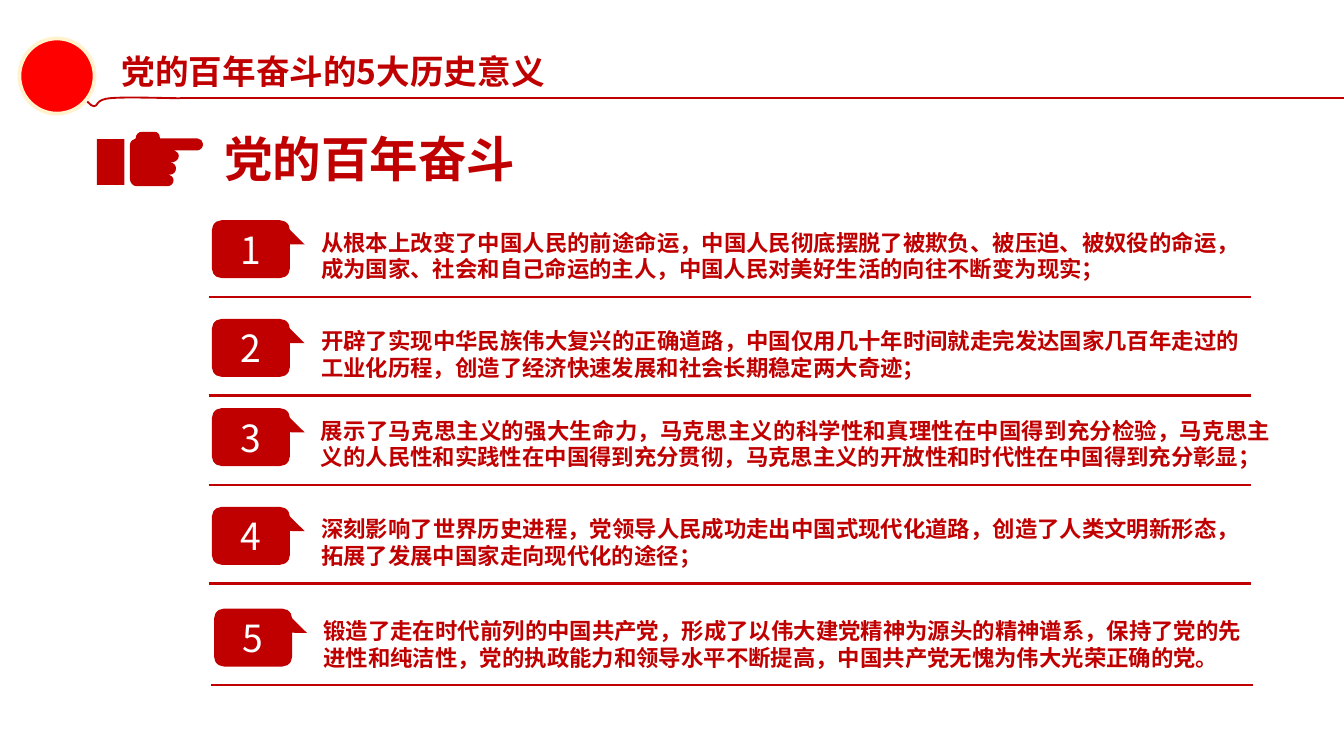
"""Build a slide on five meanings of a hundred years of struggle."""
from dataclasses import dataclass

from lxml import etree
from pptx import Presentation
from pptx.dml.color import RGBColor
from pptx.enum.shapes import MSO_CONNECTOR, MSO_SHAPE
from pptx.enum.text import MSO_ANCHOR, MSO_AUTO_SIZE, PP_ALIGN
from pptx.oxml.ns import qn
from pptx.util import Pt

STRAIGHT = MSO_CONNECTOR.STRAIGHT
BOX, OVAL = MSO_SHAPE.RECTANGLE, MSO_SHAPE.OVAL
CALLOUT = MSO_SHAPE.ROUNDED_RECTANGULAR_CALLOUT
TOP, MIDDLE = MSO_ANCHOR.TOP, MSO_ANCHOR.MIDDLE
LEFT, CENTER, JUSTIFY = PP_ALIGN.LEFT, PP_ALIGN.CENTER, PP_ALIGN.JUSTIFY
NO_FIT = MSO_AUTO_SIZE.NONE


@dataclass(frozen=True)
class Theme:
    """Colours, font and type sizes."""
    red: RGBColor = RGBColor(0xC0, 0x00, 0x00)
    bright: RGBColor = RGBColor(0xFF, 0x00, 0x00)
    cream: RGBColor = RGBColor(0xFF, 0xF2, 0xCC)
    white: RGBColor = RGBColor(0xFF, 0xFF, 0xFF)
    font: str = "Noto Sans CJK SC"
    title: int = 18
    head: int = 26
    number: int = 20
    body: int = 12
    leading: float = 1.2


@dataclass(frozen=True)
class Row:
    """One numbered point."""
    top: float
    text: str
    shift: float = 0
    width: float = 506.4


THEME = Theme()

ROWS = [
    Row(118, "从根本上改变了中国人民的前途命运，中国人民彻底摆脱了被欺负、被压迫、被奴役的命运，"
             "成为国家、社会和自己命运的主人，中国人民对美好生活的向往不断变为现实；"),
    Row(170.9, "开辟了实现中华民族伟大复兴的正确道路，中国仅用几十年时间就走完发达国家几百年走过的"
               "工业化历程，创造了经济快速发展和社会长期稳定两大奇迹；"),
    Row(218.7, "展示了马克思主义的强大生命力，马克思主义的科学性和真理性在中国得到充分检验，马克思主"
               "义的人民性和实践性在中国得到充分贯彻，马克思主义的开放性和时代性在中国得到充分彰显；",
        width=523.5),
    Row(271.6, "深刻影响了世界历史进程，党领导人民成功走出中国式现代化道路，创造了人类文明新形态，"
               "拓展了发展中国家走向现代化的途径；"),
    Row(326.1, "锻造了走在时代前列的中国共产党，形成了以伟大建党精神为源头的精神谱系，保持了党的先"
               "进性和纯洁性，党的执政能力和领导水平不断提高，中国共产党无愧为伟大光荣正确的党。",
        shift=1.2),
]

WAVE = [
    (25.9, 55.4),
    (28.8, 54.7, 31.7, 51.1, 34.6, 51.5), (38.2, 51.8, 35.3, 55.4, 38.2, 56.2),
    (41, 56.9, 42.5, 53.3, 44.6, 53.3), (46.8, 53.3, 48.2, 56.9, 50.4, 56.9),
    (52.6, 56.9, 51.1, 53.3, 59, 52.6), (67, 51.8, 88.6, 52.6, 96.5, 52.6),
]

HAND = [
    (93, 96.5),
    (93, 95, 91.5, 93.6, 89.5, 93.6), (91, 93.6),
    (93, 93.6, 94.3, 92, 94.3, 90.3), (94.3, 88.5, 93, 87.1, 91, 87.1),
    (93.5, 87.1, 95.8, 86, 95.8, 83.5), (95.8, 82, 94.3, 80.6, 92.2, 80.6),
    (105.8, 80.6),
    (107.3, 80.6, 108.8, 79, 108.8, 77.2), (108.8, 75.6, 107.3, 74.2, 105.8, 74.2),
    (85.7, 74.2),
    (85.7, 72, 84.5, 70.6, 82.8, 70.6), (76.3, 70.6),
    (74.2, 70.6, 72.7, 72, 72.7, 74.2), (71, 74.5, 69.6, 76, 69.6, 77.8),
    (69.6, 95.8),
    (69.6, 98, 71.3, 99.8, 73.4, 99.8), (89.5, 99.8),
    (91.5, 99.8, 93, 98.5, 93, 96.5),
]


def apply(target, values: dict) -> None:
    """Set each named value on the target."""
    for name, value in values.items():
        setattr(target, name, value)


def write(frame, text: str, size: int, align, color=THEME.red, bold: bool = True,
          side: float = 7.2, edge: float = 3.6, anchor=TOP) -> None:
    """Fill a text frame with one formatted paragraph."""
    apply(frame, {
        "word_wrap": True, "auto_size": NO_FIT, "vertical_anchor": anchor,
        "margin_left": Pt(side), "margin_right": Pt(side),
        "margin_top": Pt(edge), "margin_bottom": Pt(edge),
    })
    para = frame.paragraphs[0]
    apply(para, {"alignment": align, "line_spacing": Pt(size * THEME.leading)})
    run = para.add_run()
    run.text = text
    apply(run.font, {"name": THEME.font, "size": Pt(size), "bold": bold})
    run.font.color.rgb = color
    asian = etree.SubElement(run.font._element, qn("a:ea"))
    asian.set("typeface", THEME.font)


def label(slide, x: float, y: float, w: float, h: float, text: str, size: int, align) -> None:
    """Add a text box."""
    box = slide.shapes.add_textbox(Pt(x), Pt(y), Pt(w), Pt(h))
    write(box.text_frame, text, size, align)


def paint(shape, fill=None, line=None, width: float = 1) -> None:
    """Set fill and line, and drop the shadow."""
    shape.shadow.inherit = False
    for part, color in ((shape.fill, fill), (shape.line.fill, line)):
        if color is None:
            part.background()
        else:
            part.solid()
            part.fore_color.rgb = color
    if line is not None:
        shape.line.width = Pt(width)


def block(slide, kind, x: float, y: float, w: float, h: float, fill, line=None, width: float = 1):
    """Add a preset shape."""
    shape = slide.shapes.add_shape(kind, Pt(x), Pt(y), Pt(w), Pt(h))
    paint(shape, fill, line, width)
    return shape


def rule(slide, x: float, end: float, y: float, width: float) -> None:
    """Add a level line."""
    line = slide.shapes.add_connector(STRAIGHT, Pt(x), Pt(y), Pt(end), Pt(y))
    line.line.color.rgb = THEME.red
    line.line.width = Pt(width)
    etree.SubElement(line._element.spPr, qn("a:effectLst"))


def outline(slide, steps: list[tuple], close: bool, fill=None, line=None) -> None:
    """Add an outline whose six-number steps become cubic curves."""
    first, *rest = [(Pt(step[i]), Pt(step[i + 1]))
                    for step in steps for i in range(0, len(step), 2)]
    maker = slide.shapes.build_freeform(*first)
    maker.add_line_segments(rest, close=close)
    shape = maker.convert_to_shape()
    nodes = iter(list(shape._element.iter(qn("a:lnTo"))))
    for step in steps[1:]:
        node = next(nodes)
        if len(step) == 6:
            node.tag = qn("a:cubicBezTo")
            for extra in (next(nodes), next(nodes)):
                node.append(extra[0])
                extra.getparent().remove(extra)
    paint(shape, fill, line)


def point(slide, number: int, row: Row) -> None:
    """Draw one numbered row."""
    label(slide, 164.9 + row.shift, row.top + 1, row.width, 36, row.text, THEME.body, JUSTIFY)
    badge = block(slide, CALLOUT, 113.5 + row.shift, row.top, 41.8, 31, THEME.red)
    for i, value in enumerate((0.69, -0.08, 0.17)):
        badge.adjustments[i] = value
    write(badge.text_frame, str(number), THEME.number, CENTER, THEME.white, False, 0, 0, MIDDLE)
    rule(slide, 111.8 + row.shift, 670.2 + row.shift, row.top + 41, 1.25)


def main() -> None:
    """Build and save the slide."""
    deck = Presentation()
    apply(deck, {"slide_width": Pt(720), "slide_height": Pt(405)})
    slide = deck.slides.add_slide(deck.slide_layouts[5])
    outline(slide, WAVE, False, line=THEME.red)
    rule(slide, 96.5, 720, 52.6, 1)
    block(slide, OVAL, 10.4, 20.6, 40.3, 40.3, THEME.bright, THEME.cream, 2)
    title = slide.shapes.title
    apply(title, {"left": Pt(56.2), "top": Pt(24.5), "width": Pt(417.6), "height": Pt(26.6)})
    write(title.text_frame, "党的百年奋斗的5大历史意义", THEME.title, LEFT, side=9, edge=2.9)
    for number, row in enumerate(ROWS, 1):
        point(slide, number, row)
    outline(slide, HAND, True, fill=THEME.red)
    block(slide, BOX, 51.9, 74.6, 14.7, 24.5, THEME.red)
    label(slide, 113, 65.5, 354, 39, "党的百年奋斗", THEME.head, LEFT)
    deck.save("out.pptx")


if __name__ == "__main__":
    main()
